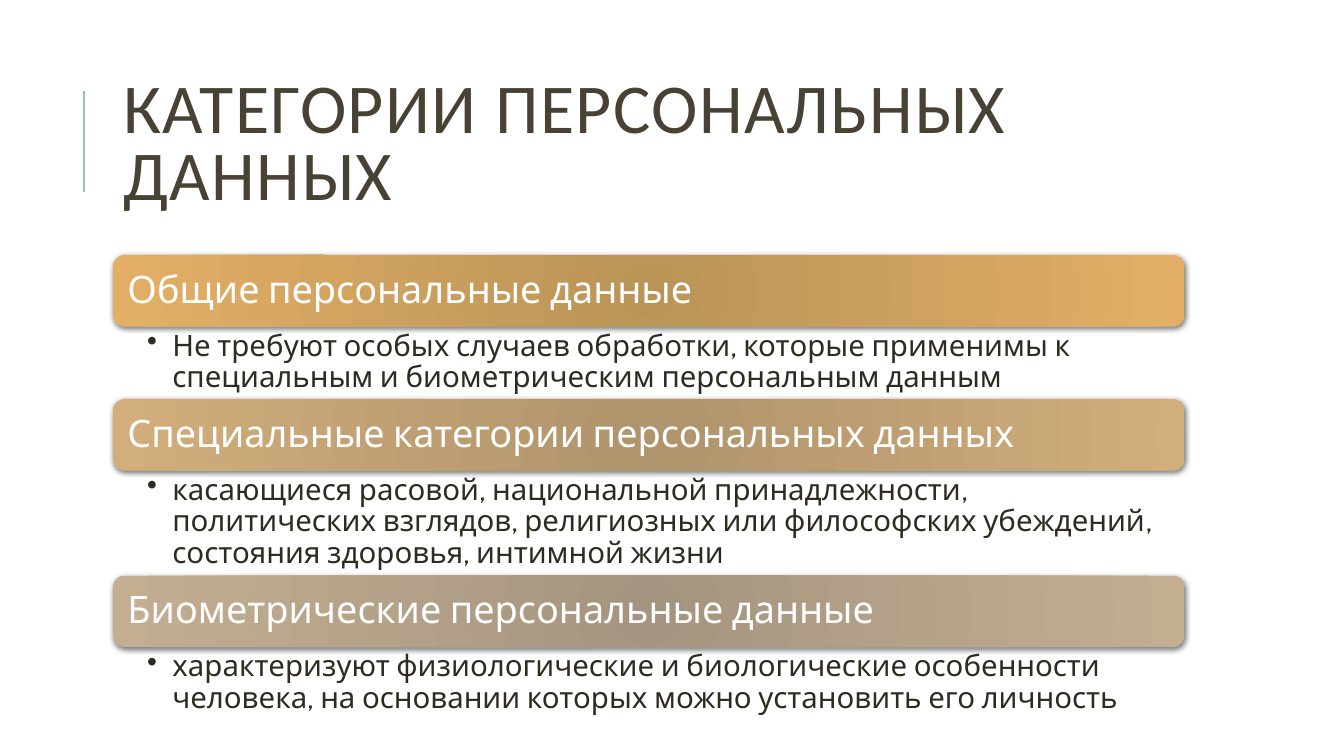
from dataclasses import dataclass

from lxml import etree
from pptx import Presentation
from pptx.dml.color import RGBColor
from pptx.enum import shapes, text
from pptx.oxml import ns
from pptx.util import Inches, Pt

TITLE = "КАТЕГОРИИ ПЕРСОНАЛЬНЫХ ДАННЫХ"

# heading, detail, detail height in inches, centre colour, edge colour
CATEGORIES = [
    ("Общие персональные данные",
     "Не требуют особых случаев обработки, которые применимы к специальным "
     "и биометрическим персональным данным",
     0.72, "BA9457", "E3AF67"),
    ("Специальные категории персональных данных",
     "касающиеся расовой, национальной принадлежности, политических взглядов, "
     "религиозных или философских убеждений, состояния здоровья, интимной жизни",
     1.04, "AF946C", "D2AE7C"),
    ("Биометрические персональные данные",
     "характеризуют физиологические и биологические особенности человека, "
     "на основании которых можно установить его личность",
     0.72, "A59580", "C3AE92"),
]


@dataclass(frozen=True)
class Theme:
    title_font: str = "Calibri"
    body_font: str = "Cabin"
    title_size: int = 50
    heading_size: int = 27
    detail_size: int = 21
    title_color: str = "474233"
    heading_color: str = "FFFFFF"
    detail_color: str = "2E2B21"
    rule_color: str = "9CBEBD"
    shadow_color: str = "000000"


THEME = Theme()
LEFT, WIDTH = 1.12, 10.63
STACK_TOP, BANNER_HEIGHT = 2.53, 0.71
BULLET_INDENT = 0.25


def add_xml(parent, tag, **attributes):
    values = {name: str(value) for name, value in attributes.items()}
    return etree.SubElement(parent, ns.qn(tag), values)


def write(shape, content, font, size, color, anchor, line_spacing=0.9,
          insets=(0.1, 0.05, 0.1, 0.05), tracking=None, bullet=None):
    """Fill a shape with one left-aligned paragraph; insets run left, top, right, bottom."""
    frame = shape.text_frame
    frame.word_wrap = True
    frame.auto_size = text.MSO_AUTO_SIZE.NONE
    frame.vertical_anchor = anchor
    (frame.margin_left, frame.margin_top,
     frame.margin_right, frame.margin_bottom) = map(Inches, insets)
    para = frame.paragraphs[0]
    para.alignment = text.PP_ALIGN.LEFT
    para.line_spacing = line_spacing
    span = para.add_run()
    span.text = content
    span.font.name = font
    span.font.size = Pt(size)
    span.font.color.rgb = RGBColor.from_string(color)
    if tracking:
        span.font._element.set("spc", str(tracking * 100))
    if bullet:
        indent = Inches(BULLET_INDENT)
        properties = para._p.get_or_add_pPr()
        properties.set("marL", str(indent))
        properties.set("indent", str(-indent))
        add_xml(properties, "a:buChar", char=bullet)


def fill_radial(shape, center, edge):
    shape.fill.gradient()
    for stop, color in zip(shape.fill.gradient_stops, (center, edge)):
        stop.color.rgb = RGBColor.from_string(color)
    gradient = shape._element.spPr.find(ns.qn("a:gradFill"))
    gradient.remove(gradient.find(ns.qn("a:lin")))
    circle = add_xml(gradient, "a:path", path="circle")
    add_xml(circle, "a:fillToRect", l=100000, t=100000, r=100000, b=100000)


def add_shadow(shape):
    shape.shadow.inherit = False
    effects = shape._element.spPr.find(ns.qn("a:effectLst"))
    shadow = add_xml(effects, "a:outerShdw", blurRad=Pt(4), dist=Pt(1),
                     dir=90 * 60000, rotWithShape=0)
    color = add_xml(shadow, "a:srgbClr", val=THEME.shadow_color)
    add_xml(color, "a:alpha", val=50000)


def add_title(page):
    title = page.shapes.title
    title.left, title.top = Inches(LEFT), Inches(0.64)
    title.width, title.height = Inches(WIDTH), Inches(1.64)
    write(title, TITLE, THEME.title_font, THEME.title_size, THEME.title_color,
          text.MSO_ANCHOR.MIDDLE, line_spacing=0.8, tracking=1)


def add_title_rule(page):
    rule = page.shapes.add_connector(
        shapes.MSO_CONNECTOR.STRAIGHT,
        Inches(0.83), Inches(1.9), Inches(0.83), Inches(0.9))
    rule.line.color.rgb = RGBColor.from_string(THEME.rule_color)
    rule.line.width = Pt(1.5)
    add_xml(rule._element.spPr, "a:effectLst")


def add_banner(page, top, heading, center, edge):
    banner = page.shapes.add_shape(
        shapes.MSO_SHAPE.ROUNDED_RECTANGLE,
        Inches(LEFT), Inches(top), Inches(WIDTH), Inches(BANNER_HEIGHT))
    fill_radial(banner, center, edge)
    banner.line.fill.background()
    add_shadow(banner)
    write(banner, heading, THEME.body_font, THEME.heading_size,
          THEME.heading_color, text.MSO_ANCHOR.MIDDLE, insets=(0.11,) * 4)


def add_detail(page, top, height, detail):
    box = page.shapes.add_textbox(
        Inches(LEFT), Inches(top), Inches(WIDTH), Inches(height))
    write(box, detail, THEME.body_font, THEME.detail_size, THEME.detail_color,
          text.MSO_ANCHOR.TOP, insets=(0.34, 0.04, 0.21, 0.04), bullet="•")


def main():
    deck = Presentation()
    deck.slide_width, deck.slide_height = Inches(13.33), Inches(7.5)
    page = deck.slides.add_slide(deck.slide_layouts.get_by_name("Title Only"))
    add_title_rule(page)
    add_title(page)
    top = STACK_TOP
    for heading, detail, detail_height, center, edge in CATEGORIES:
        add_banner(page, top, heading, center, edge)
        add_detail(page, top + BANNER_HEIGHT, detail_height, detail)
        top += BANNER_HEIGHT + detail_height
    deck.save("out.pptx")


if __name__ == "__main__":
    main()
